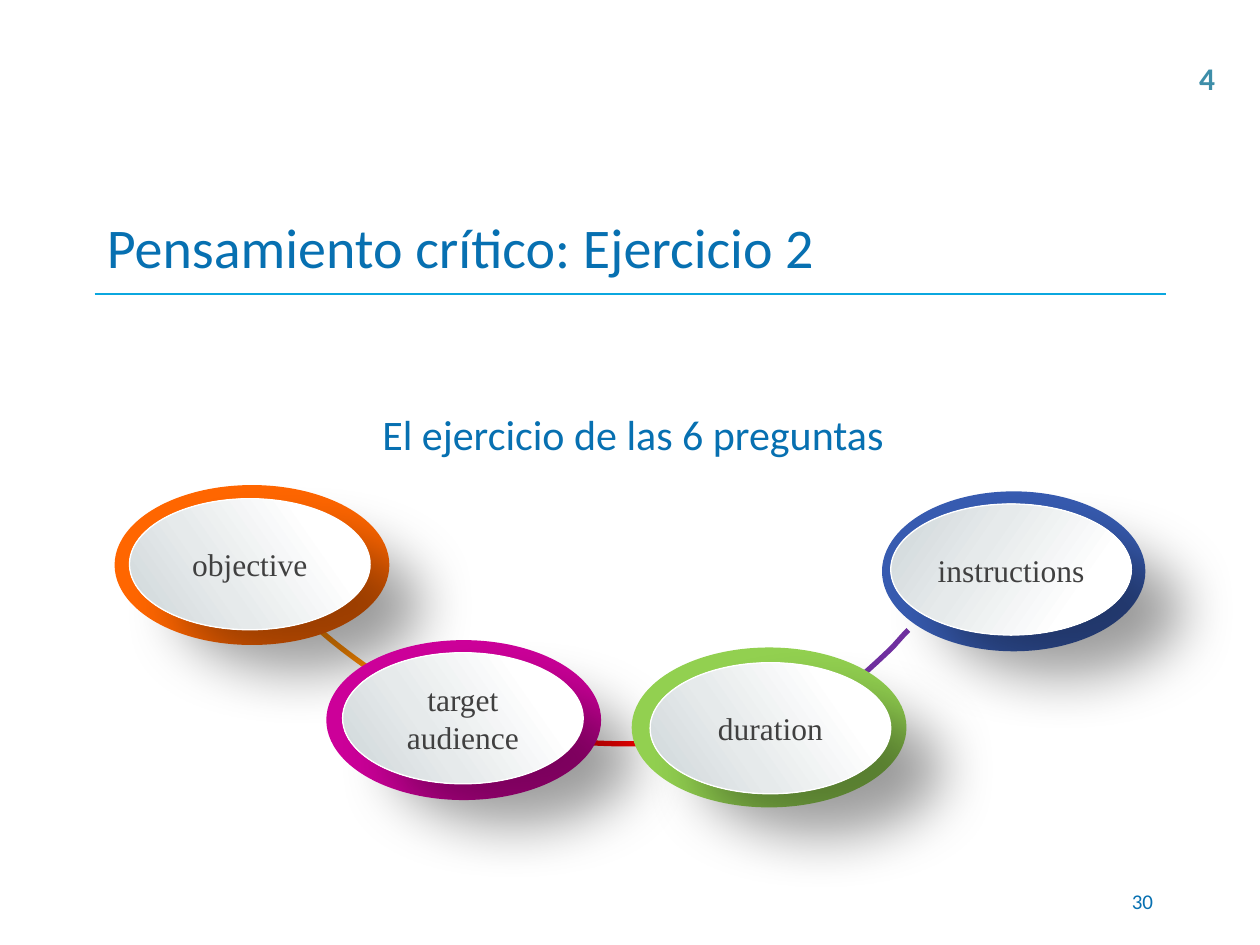
from lxml.etree import SubElement
from pptx import Presentation
from pptx.dml.color import RGBColor
from pptx.enum.shapes import MSO_CONNECTOR, MSO_SHAPE
from pptx.enum.text import MSO_ANCHOR as Anchor, MSO_AUTO_SIZE as AutoSize, PP_ALIGN as Align
from pptx.oxml.ns import qn
from pptx.util import Pt

BLUE = RGBColor(0x07, 0x70, 0xB1)
RULE_BLUE = RGBColor(0x0B, 0xA7, 0xDF)
TEAL = RGBColor(0x3E, 0x8E, 0xA9)
GREY = RGBColor(0x40, 0x40, 0x40)
WHITE = RGBColor(0xFF, 0xFF, 0xFF)
SILVER = RGBColor(0xCD, 0xD5, 0xD8)
PALE = RGBColor(0xE6, 0xEA, 0xEB)
BLACK = RGBColor(0, 0, 0)
NAVY = RGBColor(0x37, 0x5B, 0xB0)
ORANGE = RGBColor(0xFF, 0x66, 0x00)
MAGENTA = RGBColor(0xCC, 0x00, 0x99)
GREEN = RGBColor(0x92, 0xD0, 0x50)
PURPLE = RGBColor(0x70, 0x30, 0xA0)
RED = RGBColor(0xFF, 0x00, 0x00)
AMBER = RGBColor(0xFF, 0x8A, 0x00)

# Content: all lengths in points
TITLE = "Pensamiento crítico: Ejercicio 2"
SUBTITLE = "El ejercicio de las 6 preguntas"
PAGE_NUMBER = "30"
CHAPTER_NUMBER = "4"

# Links: colour, then a start point followed by three points per Bézier curve
INSTRUCTIONS_LINKS = [
    (PURPLE, [(519.1, 360), (516.2, 362.9), (513.4, 366.1), (510.5, 369.4),
              (501.1, 378.7), (491, 387.4), (481, 396)]),
    (PURPLE, [(481, 395.3), (468, 403.9), (454.3, 411.1), (439.2, 416.9)]),
]
OTHER_LINKS = [
    (RED, [(323.3, 423.4), (339.1, 424.8), (355, 425.5), (370.8, 424.8),
           (378.7, 424.1), (386.6, 423.4), (394.6, 421.9)]),
    (AMBER, [(177.8, 355.7), (193, 370.1), (211.7, 383), (231.8, 396)]),
]
# Ovals: label, ring colour, ring left, top, width, face left, top, mirrored
INSTRUCTIONS_OVAL = ("instructions", NAVY, 504, 280.8, 150.5, 509, 288, False)
OTHER_OVALS = [
    ("objective", ORANGE, 65.5, 277.2, 157, 74, 285, True),
    ("target audience", MAGENTA, 186.5, 365.8, 157, 195.8, 373, True),
    ("duration", GREEN, 361, 370, 157, 371.5, 378.7, True),
]
RING_HEIGHT, FACE_WIDTH, FACE_HEIGHT = 91.4, 137.5, 74.9
FACE_STOPS = [(0, SILVER), (0, SILVER), (37, PALE), (77, WHITE), (100, WHITE)]
MIRRORED_STOPS = [(100 - position, colour) for position, colour in reversed(FACE_STOPS)]

prs = Presentation()
prs.slide_width, prs.slide_height = Pt(720), Pt(540)
slide = prs.slides.add_slide(prs.slide_layouts[6])
shapes = slide.shapes


def write(frame, text, *, size, colour, font="Calibri", bold=False, align=Align.LEFT,
          anchor=Anchor.TOP, wrap=True, grow=False, line_spacing=None, after=None):
    frame.word_wrap = wrap
    frame.vertical_anchor = anchor
    frame.auto_size = AutoSize.SHAPE_TO_FIT_TEXT if grow else AutoSize.NONE
    paragraph = frame.paragraphs[0]
    paragraph.alignment = align
    if line_spacing:
        paragraph.line_spacing = line_spacing
    if after:
        paragraph.space_after = Pt(after)
    run = paragraph.add_run()
    run.text = text
    run.font.name, run.font.size, run.font.bold = font, Pt(size), bold
    run.font.color.rgb = colour


def add_text(text, left, top, width, height, **style):
    box = shapes.add_textbox(Pt(left), Pt(top), Pt(width), Pt(height))
    write(box.text_frame, text, **style)


def add_colour(parent, colour):
    return SubElement(parent, qn("a:srgbClr"), val=str(colour))


def bezier_points(points, steps=12):
    for i in range(0, len(points) - 1, 3):
        curve = points[i:i + 4]
        for step in range(1, steps + 1):
            t = step / steps
            weights = ((1 - t) ** 3, 3 * t * (1 - t) ** 2, 3 * t * t * (1 - t), t ** 3)
            yield tuple(Pt(sum(w * p[axis] for w, p in zip(weights, curve)))
                        for axis in (0, 1))


def add_link(colour, points):
    builder = shapes.build_freeform(Pt(points[0][0]), Pt(points[0][1]))
    builder.add_line_segments(list(bezier_points(points)), close=False)
    link = builder.convert_to_shape()
    link.shadow.inherit = False
    link.fill.background()
    link.line.color.rgb, link.line.width = colour, Pt(3)


def add_ellipse(left, top, width, height, mirrored):
    ellipse = shapes.add_shape(MSO_SHAPE.OVAL, Pt(left), Pt(top), Pt(width), Pt(height))
    ellipse.shadow.inherit = False
    if mirrored:
        ellipse._element.spPr.find(qn("a:xfrm")).set("flipH", "1")
    return ellipse


def add_oval(label, colour, left, top, width, face_left, face_top, mirrored):
    ring = add_ellipse(left, top, width, RING_HEIGHT, mirrored)
    ring.fill.solid()
    ring.fill.fore_color.rgb = colour
    ring.line.fill.background()

    face = add_ellipse(face_left, face_top, FACE_WIDTH, FACE_HEIGHT, mirrored)
    face.line.color.rgb, face.line.width = WHITE, Pt(0.75)
    face.fill.gradient()
    face.fill.gradient_angle = 360 - 35
    properties = face._element.spPr
    stops = properties.find(".//" + qn("a:gsLst"))
    for stop in list(stops):
        stops.remove(stop)
    for position, stop_colour in MIRRORED_STOPS if mirrored else FACE_STOPS:
        add_colour(SubElement(stops, qn("a:gs"), pos=str(position * 1000)), stop_colour)

    # Soft shadow towards the lower right
    shadow = SubElement(properties.find(qn("a:effectLst")), qn("a:outerShdw"),
                        blurRad=str(Pt(33)), dist=str(Pt(36.7)),
                        dir=str(39 * 60000), algn="ctr", rotWithShape="0")
    SubElement(add_colour(shadow, BLACK), qn("a:alpha"), val="38000")

    frame = face.text_frame
    frame.margin_left = frame.margin_right = frame.margin_top = frame.margin_bottom = 0
    write(frame, label, size=18, colour=GREY, font="Times New Roman",
          align=Align.CENTER, anchor=Anchor.MIDDLE)


# Rule under the title
rule = shapes.add_connector(MSO_CONNECTOR.STRAIGHT, Pt(54), Pt(168), Pt(666), Pt(168))
rule.line.color.rgb, rule.line.width = RULE_BLUE, Pt(0.75)
SubElement(rule._element.spPr, qn("a:effectLst"))

# Chain of ovals, back to front
for links, ovals in ((INSTRUCTIONS_LINKS, [INSTRUCTIONS_OVAL]), (OTHER_LINKS, OTHER_OVALS)):
    for link in links:
        add_link(*link)
    for oval in ovals:
        add_oval(*oval)

# Headings and numbers
add_text(SUBTITLE, 186.5, 225.4, 350.6, 38.9, size=24, colour=BLUE, align=Align.CENTER,
         grow=True, line_spacing=1.15, after=6)
add_text(TITLE, 54, 113.8, 612, 54, size=32, colour=BLUE, anchor=Anchor.MIDDLE)
add_text(PAGE_NUMBER, 516, 500.4, 150, 28.8, size=12, colour=BLUE, align=Align.RIGHT,
         anchor=Anchor.MIDDLE)
add_text(CHAPTER_NUMBER, 678.2, 30.2, 23.8, 28.8, size=18, colour=TEAL, bold=True,
         wrap=False, grow=True)

prs.save("out.pptx")
